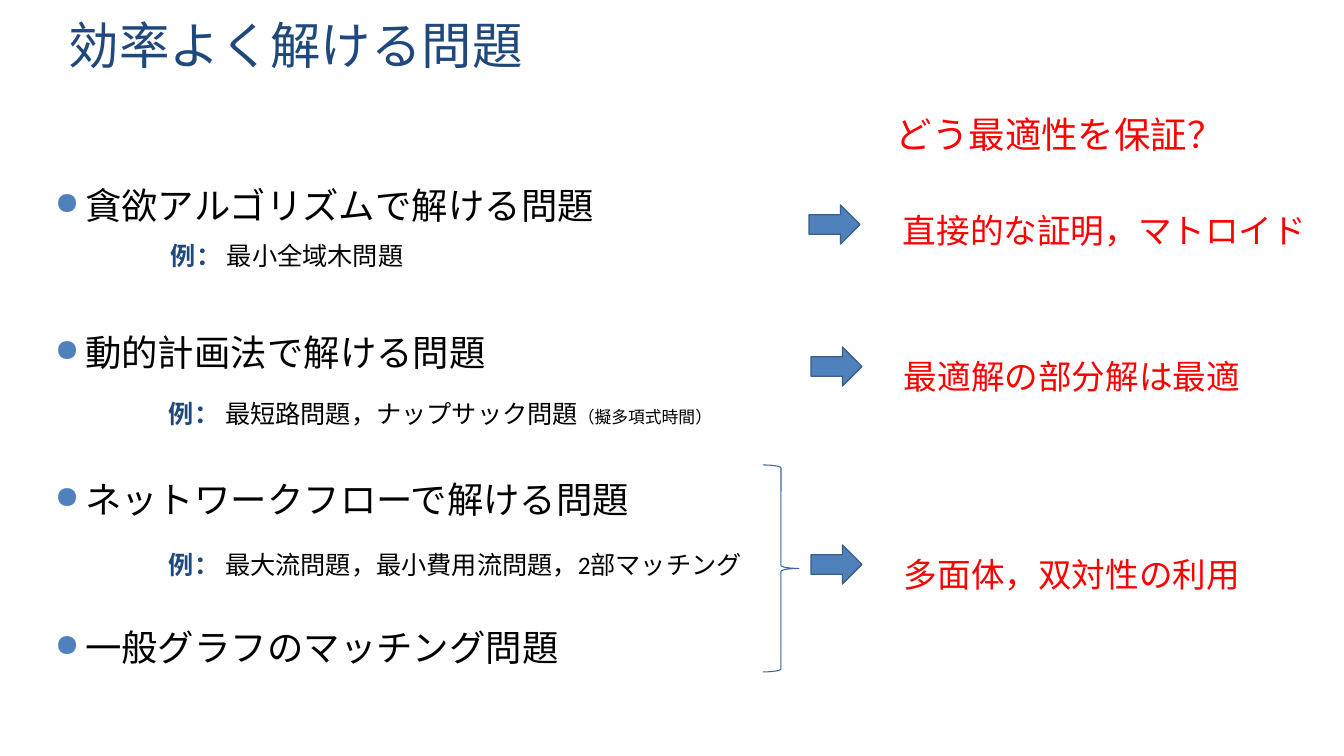
from lxml import etree
from pptx import Presentation
from pptx import util as u
from pptx.dml.color import RGBColor
from pptx.enum import shapes, text
from pptx.oxml.ns import qn

FONT = "Calibri"
NAVY, BLUE, BLACK, RED = "1F497D", "4F81BD", "000000", "FF0000"
ARROW_LINE, BRACE_LINE = "3A5F8C", "3B679C"
EMU_PER_PX = 914400 / 100.8

TITLE = "効率よく解ける問題"
PROBLEMS = [
    "貪欲アルゴリズムで解ける問題",
    "動的計画法で解ける問題",
    "ネットワークフローで解ける問題",
    "一般グラフのマッチング問題",
]
EXAMPLE_LABEL = "例： "
# left, top, width, then (text, size) parts
EXAMPLES = [
    (161, 220, 516, [("最小全域木問題", 18)]),
    (159, 378, 674, [("最短路問題，ナップサック問題", 18), ("（擬多項式時間）", 12)]),
    (159, 529, 674, [("最大流問題，最小費用流問題，2部マッチング", 18)]),
]
QUESTION = "どう最適性を保証？"
# answer, text left, text top, arrow left, arrow top
ANSWERS = [
    ("直接的な証明，マトロイド", 893, 185, 809, 205),
    ("最適解の部分解は最適", 894, 331, 811, 347),
    ("多面体，双対性の利用", 894, 529, 811, 545),
]


def px(length):
    return u.Emu(round(length * EMU_PER_PX))


def color(hex_string):
    return RGBColor.from_string(hex_string)


def add_text(slide, box, paragraphs, line_spacing=1.5):
    """Add a text box; each paragraph is a list of (text, size, colour, bold) runs."""
    shape = slide.shapes.add_textbox(*map(px, box))
    frame = shape.text_frame
    frame.word_wrap = True
    for index, runs in enumerate(paragraphs):
        paragraph = frame.add_paragraph() if index else frame.paragraphs[0]
        paragraph.line_spacing = line_spacing
        for content, size, hex_string, bold in runs:
            run = paragraph.add_run()
            run.text = content
            run.font.name = FONT
            run.font.size = u.Pt(size)
            run.font.bold = bold
            run.font.color.rgb = color(hex_string)
    return frame


def add_bullet(paragraph):
    properties = paragraph._p.get_or_add_pPr()
    properties.set("marL", str(u.Inches(0.3)))
    properties.set("indent", str(-u.Inches(0.3)))
    bullet_color = etree.SubElement(properties, qn("a:buClr"))
    etree.SubElement(bullet_color, qn("a:srgbClr"), val=BLUE)
    etree.SubElement(properties, qn("a:buSzPct"), val="85000")
    etree.SubElement(properties, qn("a:buChar"), char="●")


def add_outline_shape(slide, kind, box, line, line_width, fill=None):
    shape = slide.shapes.add_shape(kind, *map(px, box))
    shape.shadow.inherit = False
    if fill:
        shape.fill.solid()
        shape.fill.fore_color.rgb = color(fill)
    else:
        shape.fill.background()
    shape.line.color.rgb = color(line)
    shape.line.width = u.Pt(line_width)


def main():
    presentation = Presentation()
    presentation.slide_width, presentation.slide_height = px(1344), px(756)
    slide = presentation.slides.add_slide(presentation.slide_layouts[6])

    title = add_text(slide, (59, 13, 1142, 72), [[(TITLE, 36, NAVY, False)]], 1.0)
    title.vertical_anchor = text.MSO_ANCHOR.BOTTOM
    title.margin_bottom = u.Inches(0.1)

    problems = add_text(slide, (45, 156, 1142, 563),
                        [[(problem, 26, BLACK, False)] for problem in PROBLEMS])
    for index, paragraph in enumerate(problems.paragraphs):
        if index:
            paragraph.space_before = u.Pt(58.5)
        add_bullet(paragraph)

    for left, top, width, parts in EXAMPLES:
        runs = [(EXAMPLE_LABEL, 18, NAVY, True)]
        runs += [(content, size, BLACK, False) for content, size in parts]
        add_text(slide, (left, top, width, 56), [runs])

    add_text(slide, (886, 85, 357, 72), [[(QUESTION, 26, RED, False)]])
    for answer, left, top, arrow_left, arrow_top in ANSWERS:
        add_text(slide, (left, top, 445, 95), [[(answer, 24, RED, False)]])
        add_outline_shape(slide, shapes.MSO_SHAPE.RIGHT_ARROW,
                          (arrow_left, arrow_top, 51, 39), ARROW_LINE, 1, BLUE)
    add_outline_shape(slide, shapes.MSO_SHAPE.RIGHT_BRACE,
                      (763, 465, 36, 207), BRACE_LINE, 0.75)

    presentation.save("out.pptx")


if __name__ == "__main__":
    main()
